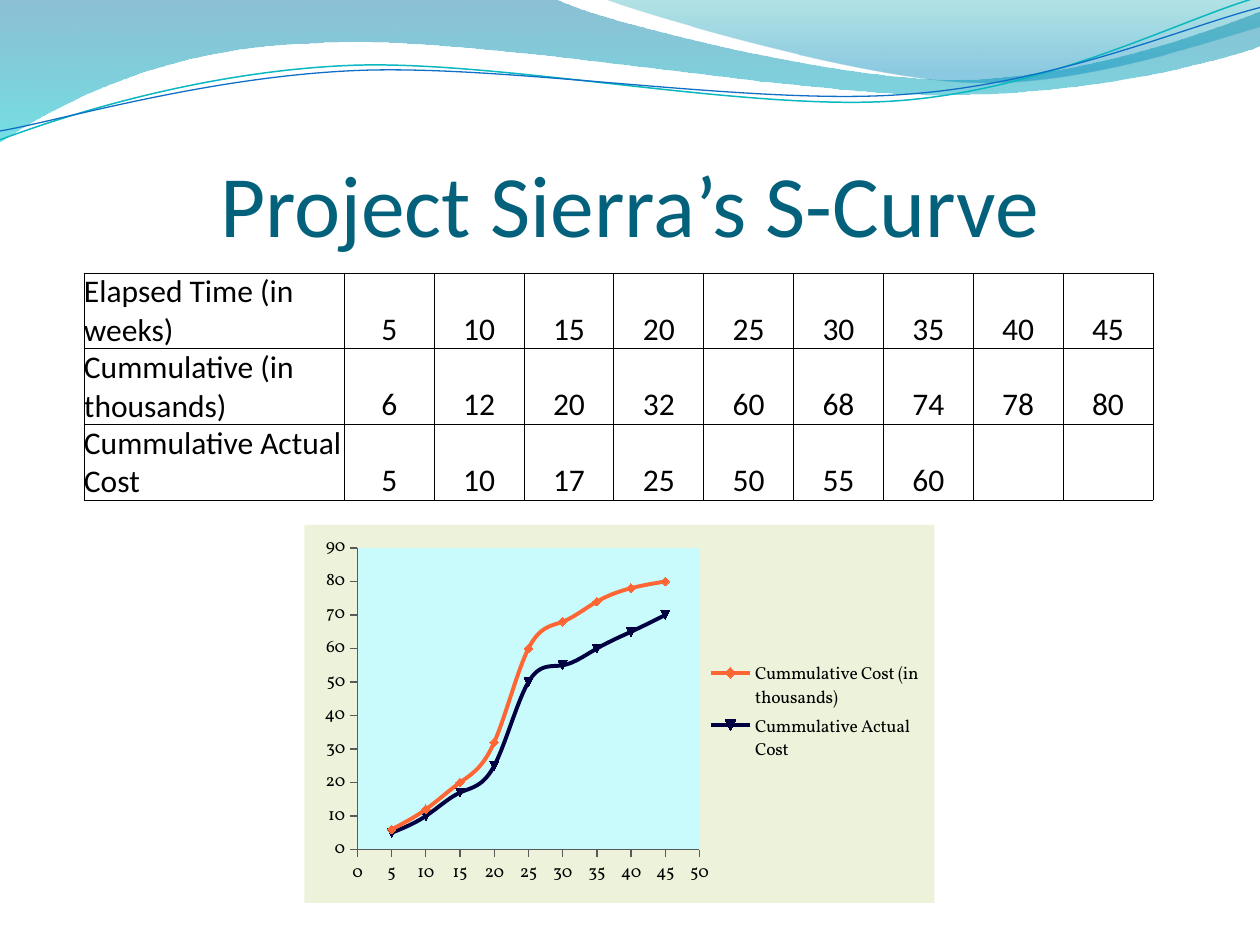
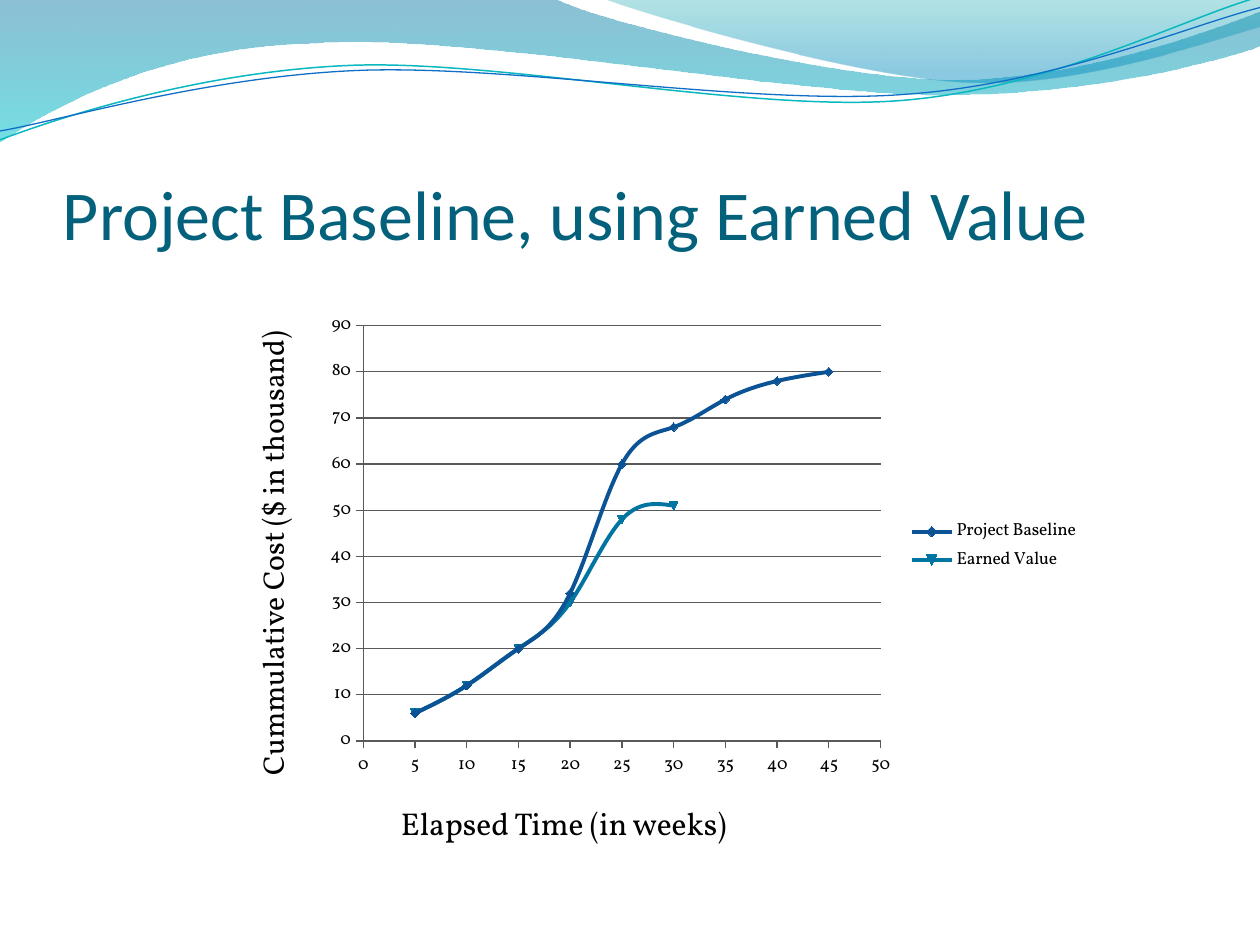
from dataclasses import dataclass
from typing import Any, NamedTuple

from lxml.etree import SubElement
from pptx import Presentation
from pptx.chart.data import XyChartData
from pptx.dml.color import RGBColor
from pptx.enum.chart import (XL_CHART_TYPE, XL_LEGEND_POSITION,
                             XL_MARKER_STYLE, XL_TICK_MARK)
from pptx.enum.text import MSO_ANCHOR, PP_ALIGN
from pptx.oxml import parse_xml
from pptx.oxml.ns import nsdecls, qn
from pptx.util import Emu, Pt

EMU_PER_PX = 3048  # 300 px to the inch
WAVE_UNIT = 3  # px in one step of the wave grid


@dataclass(frozen=True)
class Theme:
    title: str = "04617B"
    ink: str = "000000"
    axis: str = "595959"
    chart_back: str = "EDF3DB"
    plot_back: str = "C9FAFC"
    orange: str = "FF6633"
    navy: str = "000040"
    blue: str = "0B5394"
    teal: str = "0075A2"
    sans: str = "Calibri"
    serif: str = "Vollkorn"
    title_big: int = 50
    title_small: int = 40
    body: int = 18
    body_tight: int = 17
    chart_text: int = 10
    hairline: float = 0.5
    thin: float = 0.75
    curve: float = 2.25


THEME = Theme()


class Box(NamedTuple):
    left: int
    top: int
    width: int
    height: int

    def emu(self) -> list[Emu]:
        return [px(v) for v in self]


class Stop(NamedTuple):
    position: float
    color: str
    alpha: int


@dataclass(frozen=True)
class Wave:
    """A run of segments: two numbers make a line, six make a Bezier curve."""
    start: tuple[int, int]
    segments: list[tuple[int, ...]]
    stops: tuple[Stop, ...] = ()
    line: str = ""
    width: float = 0


@dataclass(frozen=True)
class Curve:
    name: str
    values: list[int]
    color: str


@dataclass(frozen=True)
class CurveChart:
    box: Box
    plot: tuple[float, float, float, float]
    curves: list[Curve]
    grid: bool = False
    back: str = ""
    plot_back: str = ""


@dataclass(frozen=True)
class Label:
    text: str
    box: Box
    size: int
    font: str = THEME.serif
    color: str = THEME.ink
    align: PP_ALIGN = PP_ALIGN.LEFT
    anchor: MSO_ANCHOR = MSO_ANCHOR.TOP
    margins: tuple[int, int, int, int] = (30, 15, 30, 15)
    rotation: int = 0
    spacing: float = 1.0


WAVES = [
    Wave((0, 0), [(440, -1), (476, 17, 664, 63, 758, 63),
                  (853, 63, 958, 26, 1000, 9), (1001, 36),
                  (983, 44, 870, 76, 746, 75), (622, 75, 382, 28, 257, 34),
                  (129, 36, 46, 83, -1, 113)],
         stops=(Stop(0, "0074A1", 45), Stop(1, "00C6CF", 55))),
    Wave((479, -1), [(509, 11, 682, 62, 769, 65),
                     (856, 69, 961, 32, 1000, 21), (1000, 0)],
         stops=(Stop(0, "00A1A9", 30), Stop(0.8, "008BBF", 45))),
    Wave((0, 111), [(48, 93, 158, 57, 277, 52), (395, 47, 593, 89, 713, 80),
                    (833, 71, 938, 15, 998, -2)], line="0AB8BF", width=0.85),
    Wave((0, 104), [(47, 96, 164, 61, 283, 56), (403, 51, 597, 84, 717, 75),
                    (836, 67, 941, 21, 1000, 6)], line="0F6FC6", width=0.75),
]

WEEKS = list(range(5, 50, 5))
BASELINE = [6, 12, 20, 32, 60, 68, 74, 78, 80]
ACTUAL = [5, 10, 17, 25, 50, 55, 60, 65, 70]
EARNED = [6, 12, 20, 30, 48, 51]
REPORTED_WEEKS = 7

COST_ROWS = [
    ("Elapsed Time (in weeks)", WEEKS),
    ("Cummulative (in thousands)", BASELINE),
    ("Cummulative Actual Cost", ACTUAL[:REPORTED_WEEKS]),
]
TABLE_BOX = Box(200, 650, 2546, 480)
LABEL_COLUMN, VALUE_COLUMN = 620, 214

S_CURVE = CurveChart(
    Box(725, 1250, 1500, 900), (0.084, 0.061, 0.543, 0.798),
    [Curve("Cummulative Cost (in thousands)", BASELINE, THEME.orange),
     Curve("Cummulative Actual Cost", ACTUAL, THEME.navy)],
    back=THEME.chart_back, plot_back=THEME.plot_back)
EARNED_VALUE = CurveChart(
    Box(750, 725, 1850, 1150), (0.062, 0.044, 0.666, 0.86),
    [Curve("Project Baseline", BASELINE, THEME.blue),
     Curve("Earned Value", EARNED, THEME.teal)], grid=True)


def px(value: int) -> Emu:
    return Emu(value * EMU_PER_PX)


def rgb(color: str) -> RGBColor:
    return RGBColor.from_string(color)


def put(obj: Any, **values: Any) -> None:
    """Set each named attribute of obj."""
    for name, value in values.items():
        setattr(obj, name, value)


def set_font(font: Any, name: str, size: int, color: str) -> None:
    put(font, name=name, size=Pt(size))
    font.color.rgb = rgb(color)


def set_line(line: Any, color: str, width: float) -> None:
    line.color.rgb = rgb(color)
    line.width = Pt(width)


def bend(sp: Any, wave: Wave) -> None:
    """Join the three line steps of each six-number segment into one curve."""
    steps = iter(list(sp._element.iter(qn("a:lnTo"))))
    for segment in wave.segments:
        first = next(steps)
        if len(segment) == 6:
            first.tag = qn("a:cubicBezTo")
            for _ in range(2):
                step = next(steps)
                first.append(step[0])
                step.getparent().remove(step)


def add_wave(s: Any, wave: Wave) -> None:
    builder = s.shapes.build_freeform(*wave.start,
                                      scale=px(WAVE_UNIT))
    builder.add_line_segments(
        [pair for segment in wave.segments
         for pair in zip(segment[::2], segment[1::2])],
        close=bool(wave.stops))
    sp = builder.convert_to_shape()
    bend(sp, wave)
    sp.shadow.inherit = False
    if not wave.stops:
        sp.fill.background()
        set_line(sp.line, wave.line, wave.width)
        return
    sp.line.fill.background()
    sp.fill.gradient()
    sp.fill.gradient_angle = 270
    for target, stop in zip(sp.fill.gradient_stops, wave.stops):
        target.color.rgb = rgb(stop.color)
        target.position = stop.position
    for color, stop in zip(sp._element.spPr.iter(qn("a:srgbClr")), wave.stops):
        SubElement(color, qn("a:alpha"), val=str(stop.alpha * 1000))


def add_label(s: Any, label: Label) -> None:
    sp = s.shapes.add_textbox(*label.box.emu())
    sp.rotation = label.rotation
    tf = sp.text_frame
    left, top, right, bottom = [px(v) for v in label.margins]
    put(tf, word_wrap=True, vertical_anchor=label.anchor, margin_left=left,
        margin_top=top, margin_right=right, margin_bottom=bottom)
    p = tf.paragraphs[0]
    put(p, alignment=label.align, line_spacing=label.spacing)
    r = p.add_run()
    r.text = label.text
    set_font(r.font, label.font, label.size, label.color)


def add_title(s: Any, text: str, size: int, align: PP_ALIGN) -> None:
    add_label(s, Label(text, Box(150, 231, 2700, 375), size, THEME.sans,
                       THEME.title, align, MSO_ANCHOR.BOTTOM, (0, 15, 0, 0)))


def add_borders(cell: Any) -> None:
    pr = cell._tc.get_or_add_tcPr()
    for i, side in enumerate(("lnL", "lnR", "lnT", "lnB")):
        pr.insert(i, parse_xml(
            f'<a:{side} {nsdecls("a")} w="{Pt(THEME.hairline)}"><a:solidFill>'
            f'<a:srgbClr val="{THEME.ink}"/></a:solidFill></a:{side}>'))


def add_cost_table(s: Any) -> None:
    count = len(WEEKS)
    table = s.shapes.add_table(len(COST_ROWS), count + 1,
                               *TABLE_BOX.emu()).table
    put(table, first_row=False, horz_banding=False)
    for i, column in enumerate(table.columns):
        column.width = px(VALUE_COLUMN if i else LABEL_COLUMN)
    for row, (name, values) in enumerate(COST_ROWS):
        texts = [name, *map(str, values)]
        texts += [""] * (count + 1 - len(texts))
        for col, text in enumerate(texts):
            cell = table.cell(row, col)
            put(cell, text=text, vertical_anchor=MSO_ANCHOR.BOTTOM,
                margin_left=0, margin_right=0, margin_top=0, margin_bottom=0)
            cell.fill.background()
            add_borders(cell)
            p = cell.text_frame.paragraphs[0]
            p.alignment = PP_ALIGN.CENTER if col else PP_ALIGN.LEFT
            for r in p.runs:
                set_font(r.font, THEME.sans, THEME.body, THEME.ink)


def area_format(color: str) -> Any:
    """Chart area properties: a plain fill, or none, without an outline."""
    fill = (f'<a:solidFill><a:srgbClr val="{color}"/></a:solidFill>'
            if color else "<a:noFill/>")
    return parse_xml(f'<c:spPr {nsdecls("c", "a")}>{fill}'
                     "<a:ln><a:noFill/></a:ln></c:spPr>")


def place_plot(chart: Any, design: CurveChart) -> None:
    area = chart._chartSpace.chart.plotArea
    for layout in area.findall(qn("c:layout")):
        area.remove(layout)
    sizes = "".join(f'<c:{tag} val="{value}"/>'
                    for tag, value in zip("xywh", design.plot))
    area.insert(0, parse_xml(
        f'<c:layout {nsdecls("c")}><c:manualLayout>'
        '<c:layoutTarget val="inner"/><c:xMode val="edge"/>'
        f'<c:yMode val="edge"/>{sizes}</c:manualLayout></c:layout>'))
    area.append(area_format(design.plot_back))
    chart._chartSpace.chart.addnext(area_format(design.back))


def add_curve_chart(s: Any, design: CurveChart) -> None:
    data = XyChartData()
    for curve in design.curves:
        points = data.add_series(curve.name)
        for week, value in zip(WEEKS, curve.values):
            points.add_data_point(week, value)
    chart = s.shapes.add_chart(XL_CHART_TYPE.XY_SCATTER_SMOOTH,
                               *design.box.emu(), data).chart
    put(chart, has_title=False, has_legend=True)
    set_font(chart.font, THEME.serif, THEME.chart_text, THEME.ink)
    put(chart.legend, position=XL_LEGEND_POSITION.RIGHT,
        include_in_layout=False)
    chart.plots[0].vary_by_categories = False
    for axis, top, step, grid in ((chart.category_axis, 50, 5, False),
                                  (chart.value_axis, 90, 10, design.grid)):
        put(axis, minimum_scale=0, maximum_scale=top, major_unit=step,
            has_major_gridlines=grid, major_tick_mark=XL_TICK_MARK.OUTSIDE,
            minor_tick_mark=XL_TICK_MARK.NONE)
        set_line(axis.format.line, THEME.axis, THEME.thin)
        if grid:
            set_line(axis.major_gridlines.format.line, THEME.axis, THEME.thin)
    for series, curve in zip(chart.plots[0].series, design.curves):
        series._element.get_or_add_smooth().val = True
        set_line(series.format.line, curve.color, THEME.curve)
        put(series.marker, style=XL_MARKER_STYLE.AUTOMATIC, size=5)
        series.marker.format.fill.solid()
        series.marker.format.fill.fore_color.rgb = rgb(curve.color)
        set_line(series.marker.format.line, curve.color, THEME.thin)
    place_plot(chart, design)


def new_slide(prs: Any) -> Any:
    s = prs.slides.add_slide(prs.slide_layouts[6])
    for wave in WAVES:
        add_wave(s, wave)
    return s


def main() -> None:
    prs = Presentation()
    put(prs, slide_width=px(3000), slide_height=px(2250))

    s = new_slide(prs)
    add_title(s, "Project Sierra’s S-Curve", THEME.title_big, PP_ALIGN.CENTER)
    add_cost_table(s)
    add_curve_chart(s, S_CURVE)

    s = new_slide(prs)
    add_title(s, "Project Baseline, using Earned Value", THEME.title_small,
              PP_ALIGN.LEFT)
    add_label(s, Label("Elapsed Time (in weeks)", Box(925, 1900, 1200, 175),
                       THEME.body))
    add_curve_chart(s, EARNED_VALUE)
    add_label(s, Label("Cummulative Cost ($ in thousand)",
                       Box(75, 1225, 1175, 125), THEME.body_tight,
                       rotation=270, spacing=0.9))
    prs.save("out.pptx")


if __name__ == "__main__":
    main()
